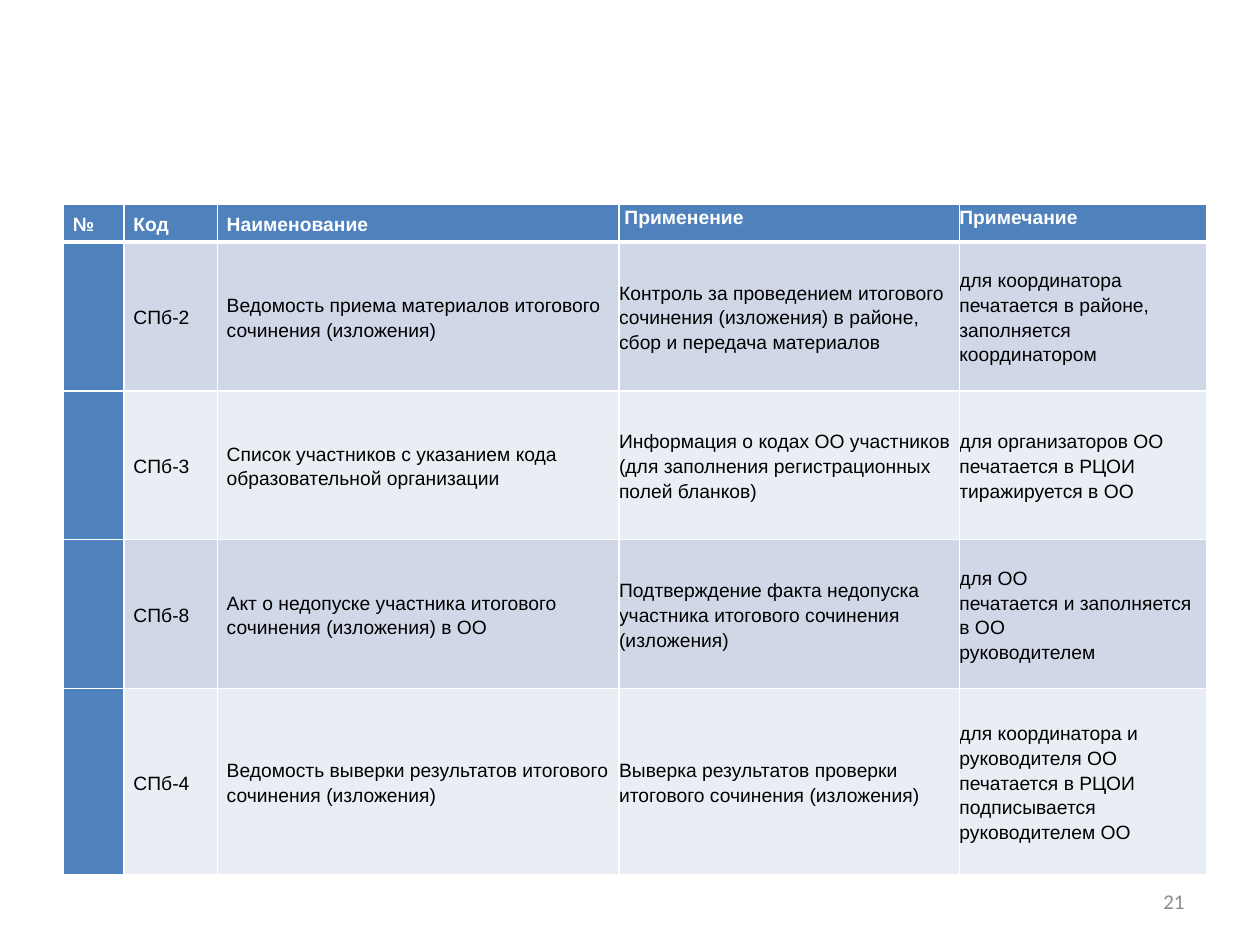
import lxml.etree
import pptx
import pptx.dml.color
import pptx.enum.text
import pptx.oxml.ns
import pptx.util

Cm, Pt = pptx.util.Cm, pptx.util.Pt
ALIGN = pptx.enum.text.PP_ALIGN
ANCHOR = pptx.enum.text.MSO_ANCHOR

COLORS = {
    "white": "FFFFFF",
    "black": "000000",
    "header": "4F81BD",
    "dark band": "D0D8E8",
    "light band": "E9EDF4",
    "number": "8C8C8C",
}
COLUMN_WIDTHS = [1.22, 1.88, 8.1, 6.86, 4.98]
ROW_HEIGHTS = [0.76, 3, 3, 3, 3.76]
# A line break inside a cell separates paragraphs.
FORMS = [
    ["№", "Код", "Наименование", " Применение", "Примечание"],
    ["", "СПб-2", "Ведомость приема материалов итогового сочинения (изложения)",
     "Контроль за проведением итогового сочинения (изложения) в районе, "
     "сбор и передача материалов",
     "для координатора\nпечатается в районе, заполняется координатором"],
    ["", "СПб-3", "Список участников с указанием кода образовательной организации",
     "Информация о кодах ОО участников (для заполнения регистрационных полей бланков)",
     "для организаторов ОО\nпечатается в РЦОИ\nтиражируется в ОО"],
    ["", "СПб-8", "Акт о недопуске участника итогового сочинения (изложения) в ОО",
     "Подтверждение факта недопуска участника итогового сочинения (изложения)",
     "для ОО\nпечатается и заполняется в ОО\nруководителем"],
    ["", "СПб-4", "Ведомость выверки результатов итогового сочинения (изложения)",
     "Выверка результатов проверки итогового сочинения (изложения)",
     "для координатора и руководителя ОО\nпечатается в РЦОИ\n"
     "подписывается руководителем ОО"],
]


def rgb(color):
    return pptx.dml.color.RGBColor.from_string(COLORS[color])


class SlideBuilder:
    """Holds the text style and the current slide."""

    def __init__(self, page, font="Arial", size=11):
        self.page = page
        self.font = font
        self.size = size

    def format_para(self, para, color, bold=False, font=None, size=None):
        para.font.name = font or self.font
        para.font.size = Pt(size or self.size)
        para.font.bold = bold
        para.font.color.rgb = rgb(color)

    def border_cell(self, cell, bottom=1):
        """Draw white borders, 1 pt wide except for the bottom one."""
        properties = cell._tc.get_or_add_tcPr()
        widths = {"lnL": 1, "lnR": 1, "lnT": 1, "lnB": bottom}
        for index, (side, width) in enumerate(widths.items()):
            line = lxml.etree.Element(pptx.oxml.ns.qn(f"a:{side}"), w=str(Pt(width)))
            fill = lxml.etree.SubElement(line, pptx.oxml.ns.qn("a:solidFill"))
            lxml.etree.SubElement(fill, pptx.oxml.ns.qn("a:srgbClr"), val=COLORS["white"])
            properties.insert(index, line)

    def fill_cell(self, cell, text, row, column):
        is_header = row == 0
        band = "dark band" if row % 2 else "light band"
        cell.fill.solid()
        cell.fill.fore_color.rgb = rgb("header" if is_header or column == 0 else band)
        self.border_cell(cell, bottom=3 if is_header else 1)
        cell.margin_left = cell.margin_right = Cm(0.19 if column < 3 else 0)
        cell.margin_top = cell.margin_bottom = 0
        top_aligned = is_header and column >= 3
        cell.vertical_anchor = ANCHOR.TOP if top_aligned else ANCHOR.MIDDLE
        cell.text_frame.text = text
        for para in cell.text_frame.paragraphs:
            para.line_spacing = 1.15
            if column == 1 and not is_header:
                para.space_after = Pt(10)
            self.format_para(para, "white" if is_header else "black", bold=is_header)

    def add_table(self, left, top, widths, heights, rows):
        table = self.page.shapes.add_table(
            len(heights), len(widths), Cm(left), Cm(top),
            Cm(sum(widths)), Cm(sum(heights))).table
        for column, width in zip(table.columns, widths):
            column.width = Cm(width)
        for row, height in zip(table.rows, heights):
            row.height = Cm(height)
        for row, texts in enumerate(rows):
            for column, text in enumerate(texts):
                self.fill_cell(table.cell(row, column), text, row, column)
        table.cell(0, 0).text_frame.paragraphs[0].alignment = ALIGN.JUSTIFY

    def add_page_number(self, left, top, width, height, number):
        box = self.page.shapes.add_textbox(Cm(left), Cm(top), Cm(width), Cm(height))
        box.text_frame.word_wrap = True
        box.text_frame.vertical_anchor = ANCHOR.MIDDLE
        para = box.text_frame.paragraphs[0]
        para.text = str(number)
        para.alignment = ALIGN.RIGHT
        self.format_para(para, "number", font="Calibri", size=12)


def main():
    deck = pptx.Presentation()
    deck.slide_width, deck.slide_height = Cm(25.4), Cm(19.05)
    blank_layout = deck.slide_layouts[6]
    builder = SlideBuilder(deck.slides.add_slide(blank_layout))
    builder.add_table(1.28, 4.12, COLUMN_WIDTHS, ROW_HEIGHTS, FORMS)
    builder.add_page_number(18.2, 17.66, 5.93, 1.01, 21)
    deck.save("out.pptx")


if __name__ == "__main__":
    main()
